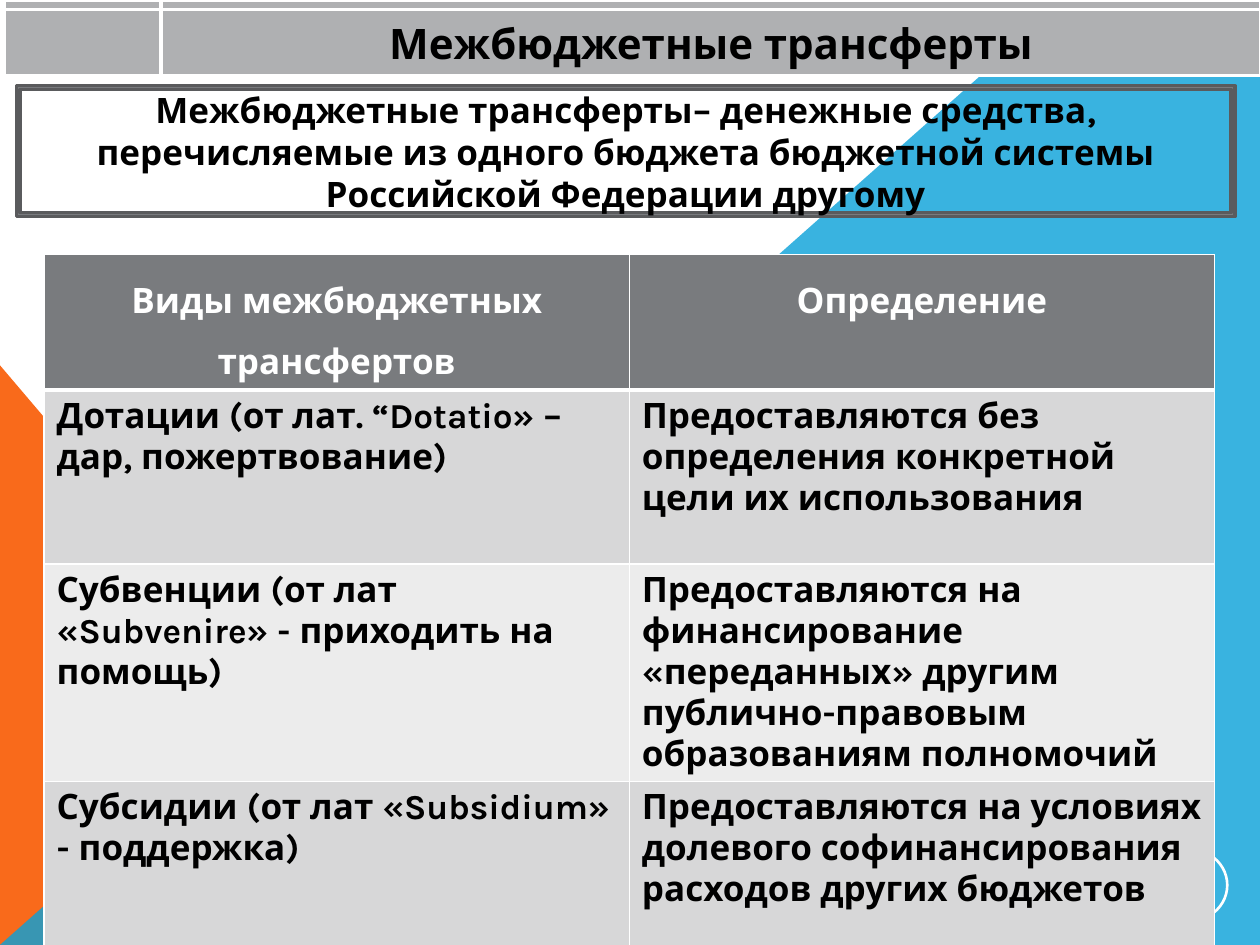
import dataclasses

import lxml.etree
import pptx
import pptx.dml.color
import pptx.enum.shapes
import pptx.enum.text
import pptx.oxml
import pptx.oxml.ns
import pptx.util

Inches, Pt = pptx.util.Inches, pptx.util.Pt
RGB = pptx.dml.color.RGBColor.from_string
SHAPE = pptx.enum.shapes.MSO_SHAPE
ALIGN = pptx.enum.text.PP_ALIGN
MIDDLE = pptx.enum.text.MSO_ANCHOR.MIDDLE
qn = pptx.oxml.ns.qn


@dataclasses.dataclass(frozen=True)
class Theme:
    font: str = "Karla"
    title: int = 24
    body: int = 20
    black: str = "000000"
    white: str = "FFFFFF"
    orange: str = "F96A1B"
    blue: str = "08A1D9"
    banner: str = "AFB0B2"
    gray: str = "797B7E"
    frame_line: str = "5A5B5D"
    bands: tuple = ("D7D7D8", "ECECEC")


T = Theme()

ROWS = [
    ("Виды межбюджетных трансфертов", "Определение"),
    ("Дотации (от лат. “Dotatio» – дар, пожертвование)",
     "Предоставляются без определения конкретной цели их использования"),
    ("Субвенции (от лат «Subvenire» - приходить на помощь)",
     "Предоставляются на финансирование «переданных» другим "
     "публично-правовым образованиям полномочий"),
    ("Субсидии (от лат «Subsidium» - поддержка)",
     "Предоставляются на условиях долевого софинансирования расходов других бюджетов"),
]
ROW_HEIGHTS = (0.71, 1.38, 1.61, 1.38)


def write(tf, text, size=T.body, color=T.black, align=ALIGN.LEFT, spacing=None):
    tf.word_wrap = True
    p = tf.paragraphs[0]
    p.alignment = align
    if spacing:
        p.line_spacing = spacing
    r = p.add_run()
    r.text = text
    r.font.name, r.font.size, r.font.bold = T.font, Pt(size), True
    r.font.color.rgb = RGB(color)


def paint(sp, fill=None, line=None, width=1):
    sp.shadow.inherit = False
    if fill:
        sp.fill.solid()
        sp.fill.fore_color.rgb = RGB(fill)
    else:
        sp.fill.background()
    if line:
        sp.line.color.rgb = RGB(line)
        sp.line.width = Pt(width)
    else:
        sp.line.fill.background()


def add_shape(s, kind, box, **style):
    sp = s.shapes.add_shape(kind, *map(Inches, box))
    paint(sp, **style)
    return sp


def add_backdrop(s, box):
    x, y, w, h = box
    right, bottom = x + w, y + h
    add_shape(s, SHAPE.RIGHT_TRIANGLE, (x, bottom - 4.6, 3.91, 4.6), fill=T.orange)
    outline = [(x + 8.46, y), (right, y), (right, bottom)]
    fb = s.shapes.build_freeform(Inches(x), Inches(bottom))
    fb.add_line_segments([(Inches(px), Inches(py)) for px, py in outline], close=True)
    sp = fb.convert_to_shape()
    paint(sp, fill=T.blue)
    color = sp.fill._xPr.find(qn("a:solidFill"))[0]
    lxml.etree.SubElement(color, qn("a:alpha"), val="80000")
    add_shape(s, SHAPE.OVAL, (right - 0.81, bottom - 0.75, 0.55, 0.55),
              line=T.white, width=1.5)


def add_title(s, box):
    sp = add_shape(s, SHAPE.FLOWCHART_INTERNAL_STORAGE, box,
                   fill=T.banner, line=T.white, width=2)
    sp.text_frame.vertical_anchor = MIDDLE
    write(sp.text_frame, "Межбюджетные трансферты", size=T.title, align=ALIGN.CENTER)


def add_definition(s, box):
    sp = add_shape(s, SHAPE.FRAME, box, fill=T.gray, line=T.frame_line, width=2)
    sp.adjustments[0] = 0.03
    sp.text_frame.vertical_anchor = MIDDLE
    write(sp.text_frame,
          "Межбюджетные трансферты– денежные средства, перечисляемые из одного бюджета "
          "бюджетной системы Российской Федерации другому", align=ALIGN.CENTER)


def set_borders(cell, **widths):
    """Draw white borders; widths are points by side: L, R, T, B."""
    tcPr = cell._tc.get_or_add_tcPr()
    for i, (side, width) in enumerate(widths.items()):
        ln = pptx.oxml.parse_xml(
            f'<a:ln{side} xmlns:a="http://schemas.openxmlformats.org/drawingml/2006/main" '
            f'w="{Pt(width)}"><a:solidFill><a:srgbClr val="{T.white}"/></a:solidFill>'
            f'</a:ln{side}>')
        tcPr.insert(i, ln)


def add_types_table(s, box):
    table = s.shapes.add_table(len(ROWS), 2, *map(Inches, box)).table
    for row, height in zip(table.rows, ROW_HEIGHTS):
        row.height = Inches(height)
    for i, texts in enumerate(ROWS):
        header = i == 0
        for j, text in enumerate(texts):
            cell = table.cell(i, j)
            cell.fill.solid()
            cell.fill.fore_color.rgb = RGB(T.gray if header else T.bands[(i - 1) % 2])
            set_borders(cell, L=1, R=1, T=3 if i == 1 else 1, B=3 if header else 1)
            if header:
                write(cell.text_frame, text, color=T.white, align=ALIGN.CENTER, spacing=1.5)
            else:
                write(cell.text_frame, text)


def main():
    prs = pptx.Presentation()
    prs.slide_width, prs.slide_height = Inches(10), Inches(7.5)
    s = prs.slides.add_slide(prs.slide_layouts[6])
    add_backdrop(s, (0, 0, 10, 7.5))
    add_title(s, (0.03, 0, 9.98, 0.6))
    add_types_table(s, (0.35, 2.02, 9.29, sum(ROW_HEIGHTS)))
    add_definition(s, (0.13, 0.68, 9.67, 1.04))
    prs.save("out.pptx")


if __name__ == "__main__":
    main()
